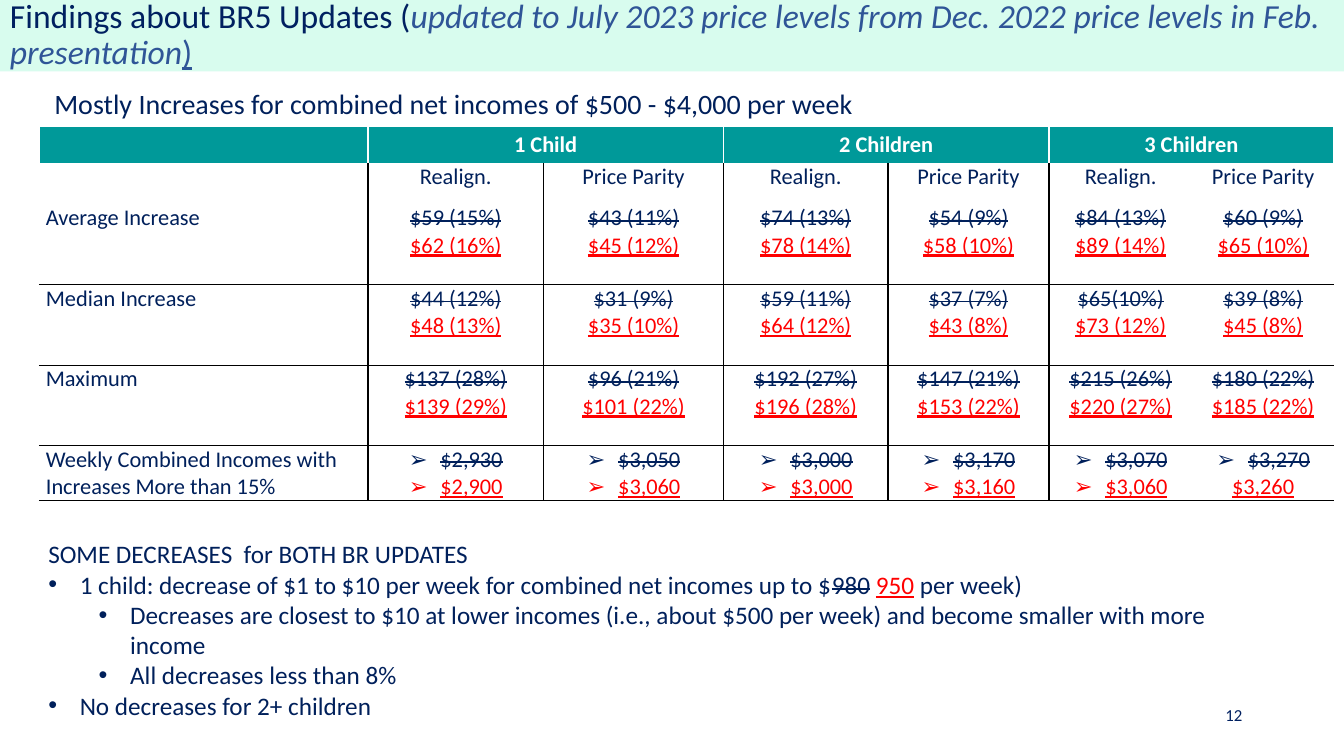
import pptx
import pptx.util
import pptx.dml.color
import pptx.enum.shapes
import pptx.enum.text
import pptx.oxml.ns
import lxml.etree

Pt = pptx.util.Pt
ALIGN = pptx.enum.text.PP_ALIGN
ANCHOR = pptx.enum.text.MSO_ANCHOR

TITLE = [
    ("Findings about BR5 Updates (", "title"),
    ("updated to July 2023 price levels from Dec. 2022 price levels in Feb. presentation", "aside"),
    (")", "closing"),
]
SUBTITLE = "Mostly Increases for combined net incomes of $500 - $4,000 per week"
FAMILIES = ["1 Child", "2 Children", "3 Children"]
METHODS = ["Realign.", "Price Parity"]
MEASURES = [
    ("Average Increase",
     ["$59 (15%)", "$43 (11%)", "$74 (13%)", "$54 (9%)", "$84 (13%)", "$60 (9%)"],
     ["$62 (16%)", "$45 (12%)", "$78 (14%)", "$58 (10%)", "$89 (14%)", "$65 (10%)"]),
    ("Median Increase",
     ["$44 (12%)", "$31 (9%)", "$59 (11%)", "$37 (7%)", "$65(10%)", "$39 (8%)"],
     ["$48 (13%)", "$35 (10%)", "$64 (12%)", "$43 (8%)", "$73 (12%)", "$45 (8%)"]),
    ("Maximum",
     ["$137 (28%)", "$96 (21%)", "$192 (27%)", "$147 (21%)", "$215 (26%)", "$180 (22%)"],
     ["$139 (29%)", "$101 (22%)", "$196 (28%)", "$153 (22%)", "$220 (27%)", "$185 (22%)"]),
    ("Weekly Combined Incomes with Increases More than 15%",
     ["$2,930", "$3,050", "$3,000", "$3,170", "$3,070", "$3,270"],
     ["$2,900", "$3,060", "$3,000", "$3,160", "$3,060", "$3,260"]),
]
DECREASES = [
    ("SOME DECREASES  for BOTH BR UPDATES", None),
    ([("1 child: decrease of $1 to $10 per week for combined net incomes up to $", "body"),
      ("980", "old"), (" ", "body"), ("950", "new"), (" per week)", "body")], 0),
    ("Decreases are closest to $10 at lower incomes (i.e., about $500 per week) "
     "and become smaller with more income", 1),
    ("All decreases less than 8%", 1),
    ("No decreases for 2+ children", 0),
]
PAGE = "12"

THEME = {
    "font": "Calibri",
    "band": "D8FCEE", "header": "009999", "paper": "FFFFFF", "rule": "000000",
    "sizes": {"title": 24, "subtitle": 20, "decreases": 18, "table": 16, "page": 12},
    "styles": {
        "title": {"color": "002060"},
        "aside": {"color": "2F5597", "italic": True},
        "closing": {"color": "2F5597", "underline": True},
        "body": {"color": "00205B"},
        "old": {"color": "00205B", "strike": True},
        "new": {"color": "FF0000", "underline": True},
        "heading": {"color": "FFFFFF", "bold": True},
    },
}
SLIDE_SIZE = (960, 540)
TABLE_AT = (27.8, 90)
COLUMNS = [235, 125.5, 128.5, 117.5, 115, 102.5, 101]
ROWS = [26.5, 29.5, 57.5, 57.5, 57.5, 39]
INDENT, LEVEL_STEP = 22.5, 36


def rgb(code):
    return pptx.dml.color.RGBColor.from_string(code)


def add_child(parent, tag, **attributes):
    return lxml.etree.SubElement(parent, pptx.oxml.ns.qn(tag), attributes)


def write(frame, paragraphs, size, style="body", align=ALIGN.LEFT, spacing=None, bullet="•"):
    frame.word_wrap = True
    for index, (content, level) in enumerate(paragraphs):
        paragraph = frame.paragraphs[0] if index == 0 else frame.add_paragraph()
        paragraph.alignment = align
        if spacing:
            paragraph.line_spacing = spacing
        if level is not None:
            paragraph.level = level
            properties = paragraph._p.get_or_add_pPr()
            properties.set("marL", str(int(Pt(INDENT + level * LEVEL_STEP))))
            properties.set("indent", str(-int(Pt(INDENT))))
            add_child(properties, "a:buFont", typeface="Arial")
            add_child(properties, "a:buChar", char=bullet)
        runs = [(content, style)] if isinstance(content, str) else content
        for words, name in runs:
            look = THEME["styles"][name]
            run = paragraph.add_run()
            run.text = words
            run.font.name = THEME["font"]
            run.font.size = Pt(THEME["sizes"][size])
            run.font.color.rgb = rgb(look["color"])
            run.font.bold = look.get("bold", False)
            run.font.italic = look.get("italic", False)
            run.font.underline = look.get("underline", False)
            if look.get("strike"):
                run._r.get_or_add_rPr().set("strike", "sngStrike")


def add_text(slide, box, paragraphs, size, anchor=ANCHOR.TOP, **look):
    frame = slide.shapes.add_textbox(*map(Pt, box)).text_frame
    frame.vertical_anchor = anchor
    write(frame, paragraphs, size, **look)


def set_borders(cell, edges):
    properties = cell._tc.get_or_add_tcPr()
    for position, side in enumerate("LRTB"):
        line = lxml.etree.Element(pptx.oxml.ns.qn("a:ln" + side), w=str(int(Pt(1))))
        if side in edges:
            add_child(add_child(line, "a:solidFill"), "a:srgbClr", val=edges[side])
        else:
            add_child(line, "a:noFill")
        properties.insert(position, line)


def cell_edges(row, column):
    last = len(COLUMNS) - 1
    if row == 0:
        return dict.fromkeys("LRT", THEME["paper"])
    sides = ""
    if column > 0 and column < last:
        sides += "L"
    if column < last - 1:
        sides += "R"
    if row > 2:
        sides += "T"
    if row > 1:
        sides += "B"
    return dict.fromkeys(sides, THEME["rule"])


def measure_cell(row, column):
    label, before, after = MEASURES[row - 2]
    if column == 0:
        return [(label, None)]
    listed = row == len(ROWS) - 1
    final = column == len(COLUMNS) - 1
    return [([(before[column - 1], "old")], 0 if listed else None),
            ([(after[column - 1], "new")], 0 if listed and not final else None)]


def add_findings(slide):
    table = slide.shapes.add_table(len(ROWS), len(COLUMNS), *map(Pt, TABLE_AT),
                                   Pt(sum(COLUMNS)), Pt(sum(ROWS))).table
    table.first_row = table.horz_banding = False
    for column, width in enumerate(COLUMNS):
        table.columns[column].width = Pt(width)
    for row, height in enumerate(ROWS):
        table.rows[row].height = Pt(height)
        for column in range(len(COLUMNS)):
            cell = table.cell(row, column)
            cell.margin_left = cell.margin_right = Pt(5)
            cell.margin_top = cell.margin_bottom = 0
            cell.vertical_anchor = ANCHOR.TOP if row else ANCHOR.MIDDLE
            cell.fill.solid()
            cell.fill.fore_color.rgb = rgb(THEME["paper" if row else "header"])
            set_borders(cell, cell_edges(row, column))
            family, method = divmod(column - 1, len(METHODS))
            if row > 1:
                content = measure_cell(row, column)
            elif column == 0 or (row == 0 and method):
                content = []
            else:
                content = [(METHODS[method] if row else FAMILIES[family], None)]
            write(cell.text_frame, content, "table", style="body" if row else "heading",
                  align=ALIGN.CENTER if column else ALIGN.LEFT, bullet="➢")
    for first in range(1, len(COLUMNS), len(METHODS)):
        table.cell(0, first).merge(table.cell(0, first + 1))


def main():
    deck = pptx.Presentation()
    deck.slide_width, deck.slide_height = map(Pt, SLIDE_SIZE)
    slide = deck.slides.add_slide(deck.slide_layouts[6])

    band = slide.shapes.add_shape(pptx.enum.shapes.MSO_SHAPE.RECTANGLE, 0, 0, Pt(960), Pt(51))
    band.shadow.inherit = False
    band.fill.solid()
    band.fill.fore_color.rgb = rgb(THEME["band"])
    band.line.fill.background()
    band.text_frame.vertical_anchor = ANCHOR.MIDDLE
    write(band.text_frame, [(TITLE, None)], "title", spacing=0.9)

    add_text(slide, (860, 502, 34.5, 17), [(PAGE, None)], "page",
             anchor=ANCHOR.MIDDLE, style="title", align=ALIGN.RIGHT)
    add_text(slide, (27.4, 381.3, 882.7, 138), DECREASES, "decreases")
    add_findings(slide)
    add_text(slide, (31.7, 58.5, 796, 31.5), [(SUBTITLE, None)], "subtitle")
    deck.save("out.pptx")


if __name__ == "__main__":
    main()
